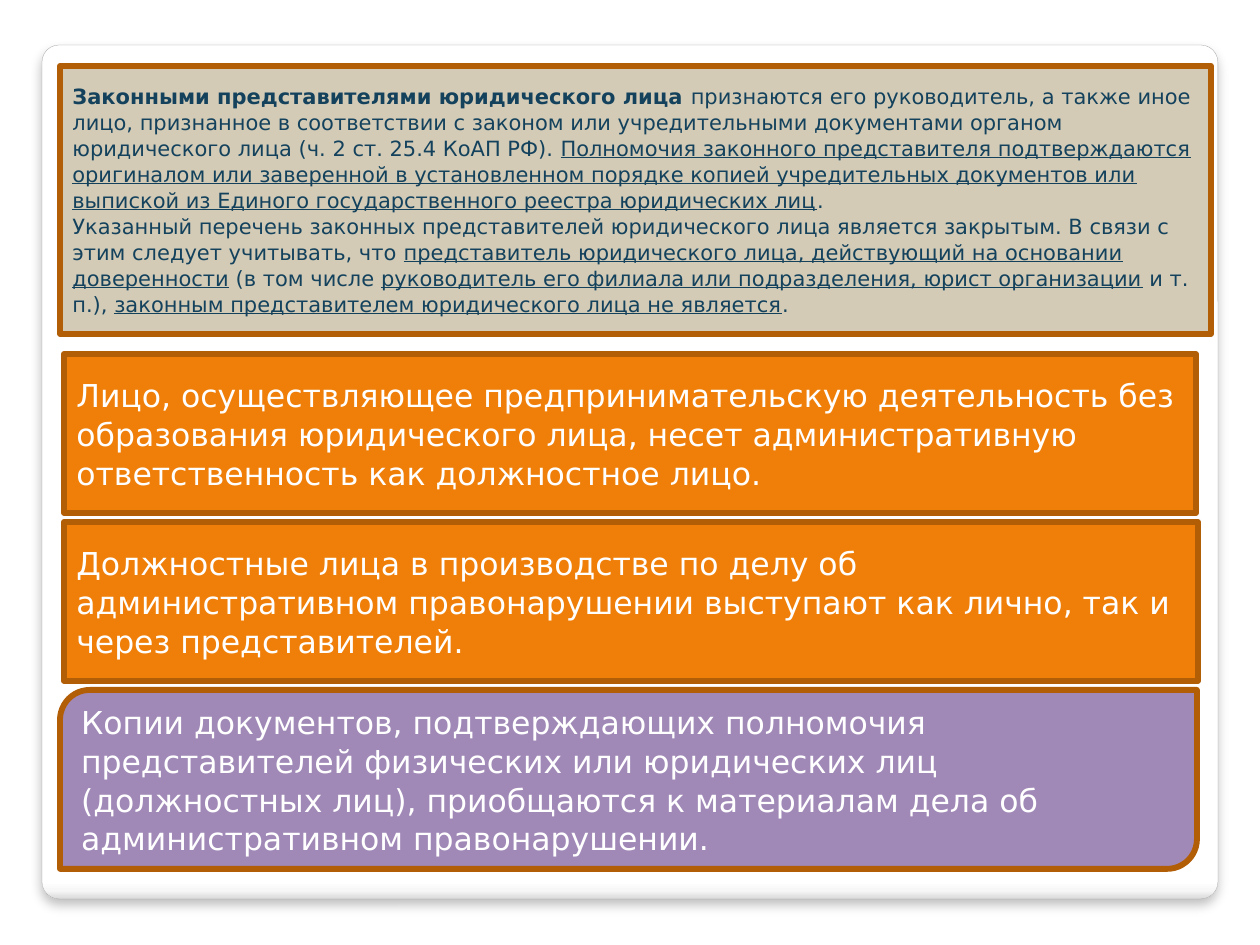
"""Build the slide on legal representatives and officials in administrative cases."""
from dataclasses import dataclass

from lxml.etree import SubElement
from pptx import Presentation
from pptx.dml.color import RGBColor
from pptx.enum.shapes import MSO_SHAPE
from pptx.enum.text import MSO_ANCHOR, PP_ALIGN
from pptx.oxml import parse_xml
from pptx.oxml.ns import nsdecls, qn
from pptx.util import Emu, Pt

PX = 914400 // 126
FONT = "DejaVu Sans"
COLORS = {
    "white": "FFFFFF",
    "edge": "DADADA",
    "edge_light": "F7F7F7",
    "panel_line": "A4A4A4",
    "shadow": "000000",
    "sand": "D3CBB6",
    "orange": "F07F09",
    "purple": "A088B7",
    "brown": "B25E07",
    "navy": "14425D",
}
PANEL_STOPS = ((0, "white"), (98, "white"), (99, "edge_light"), (100, "edge"))
BOLD = {"bold": True}
PLAIN = {}
UNDER = {"underline": True}


@dataclass(frozen=True)
class Box:
    """A filled box, placed in px, with paragraphs of (text, format) runs."""

    left: int
    top: int
    width: int
    height: int
    fill: str
    paragraphs: tuple
    size: int = 18
    color: str = "white"
    preset: MSO_SHAPE = MSO_SHAPE.RECTANGLE


BOXES = (
    Box(60, 66, 1151, 268, "sand", (
        (
            ("Законными представителями юридического лица ", BOLD),
            ("признаются его руководитель, а также иное лицо, признанное в соответствии "
             "с законом или учредительными документами органом юридического лица "
             "(ч. 2 ст. 25.4 КоАП РФ). ", PLAIN),
            ("Полномочия законного представителя подтверждаются оригиналом или заверенной "
             "в установленном порядке копией учредительных документов или выпиской из "
             "Единого государственного реестра юридических лиц", UNDER),
            (".", PLAIN),
        ),
        (
            ("Указанный перечень законных представителей юридического лица является "
             "закрытым. В связи с этим следует учитывать, что ", PLAIN),
            ("представитель юридического лица, действующий на основании доверенности", UNDER),
            (" (в том числе ", PLAIN),
            ("руководитель его филиала или подразделения, юрист организации", UNDER),
            (" и т. п.), ", PLAIN),
            ("законным представителем юридического лица не является", UNDER),
            (".", PLAIN),
        ),
    ), size=12, color="navy"),
    Box(64, 354, 1132, 159, "orange", (
        (("Лицо, осуществляющее предпринимательскую деятельность без образования "
          "юридического лица, несет административную ответственность как должностное "
          "лицо.", PLAIN),),
    )),
    Box(64, 522, 1134, 159, "orange", (
        (("Должностные лица в производстве по делу об административном правонарушении "
          "выступают как лично, так и через представителей.", PLAIN),),
    )),
    Box(60, 690, 1137, 179, "purple", (
        (("Копии документов, подтверждающих полномочия представителей физических или "
          "юридических лиц (должностных лиц), приобщаются к материалам дела об "
          "административном правонарушении.", PLAIN),),
    ), preset=MSO_SHAPE.ROUND_2_DIAG_RECTANGLE),
)


def px(value: int) -> Emu:
    """Turn px into EMU."""
    return Emu(value * PX)


def rgb(name: str) -> RGBColor:
    """Look up a named colour."""
    return RGBColor.from_string(COLORS[name])


def add_preset(s, preset: MSO_SHAPE, bounds: tuple, line: str, weight: float):
    """Add an outlined preset shape without a shadow."""
    sp = s.shapes.add_shape(preset, *map(px, bounds))
    sp.shadow.inherit = False
    sp.line.color.rgb = rgb(line)
    sp.line.width = Pt(weight)
    return sp


def draw_panel(s) -> None:
    """Draw the rounded backing panel with its edge gradient and soft shadow."""
    sp = add_preset(s, MSO_SHAPE.ROUNDED_RECTANGLE, (42, 45, 1176, 854), "panel_line", 0.16)
    sp.adjustments[0] = 0.02
    stops = "".join(
        f'<a:gs pos="{pos * 1000}"><a:srgbClr val="{COLORS[name]}"/></a:gs>'
        for pos, name in PANEL_STOPS
    )
    gradient = parse_xml(
        f'<a:gradFill {nsdecls("a")} rotWithShape="1"><a:gsLst>{stops}</a:gsLst>'
        '<a:lin ang="5400000" scaled="0"/></a:gradFill>'
    )
    properties = sp.element.spPr
    properties.find(qn("a:prstGeom")).addnext(gradient)
    shadow = SubElement(
        properties.find(qn("a:effectLst")), qn("a:outerShdw"),
        blurRad=str(Pt(6)), dist=str(Pt(4)), dir="5400000", algn="t", rotWithShape="0",
    )
    tint = SubElement(shadow, qn("a:srgbClr"), val=COLORS["shadow"])
    SubElement(tint, qn("a:alpha"), val="25000")


def draw_box(s, box: Box) -> None:
    """Draw one box and its formatted text."""
    bounds = (box.left, box.top, box.width, box.height)
    sp = add_preset(s, box.preset, bounds, "brown", 3.35)
    sp.fill.solid()
    sp.fill.fore_color.rgb = rgb(box.fill)
    tf = sp.text_frame
    tf.word_wrap = True
    tf.vertical_anchor = MSO_ANCHOR.MIDDLE
    for index, runs in enumerate(box.paragraphs):
        p = tf.add_paragraph() if index else tf.paragraphs[0]
        p.alignment = PP_ALIGN.LEFT
        p.line_spacing = 1.03
        for text, extra in runs:
            r = p.add_run()
            r.text = text
            r.font.color.rgb = rgb(box.color)
            values = {"name": FONT, "size": Pt(box.size), **extra}
            for name, value in values.items():
                setattr(r.font, name, value)


def main() -> None:
    """Create and save the presentation."""
    prs = Presentation()
    prs.slide_width, prs.slide_height = Emu(9144000), Emu(6858000)
    s = prs.slides.add_slide(prs.slide_layouts[6])
    draw_panel(s)
    for box in BOXES:
        draw_box(s, box)
    prs.save("out.pptx")


if __name__ == "__main__":
    main()
